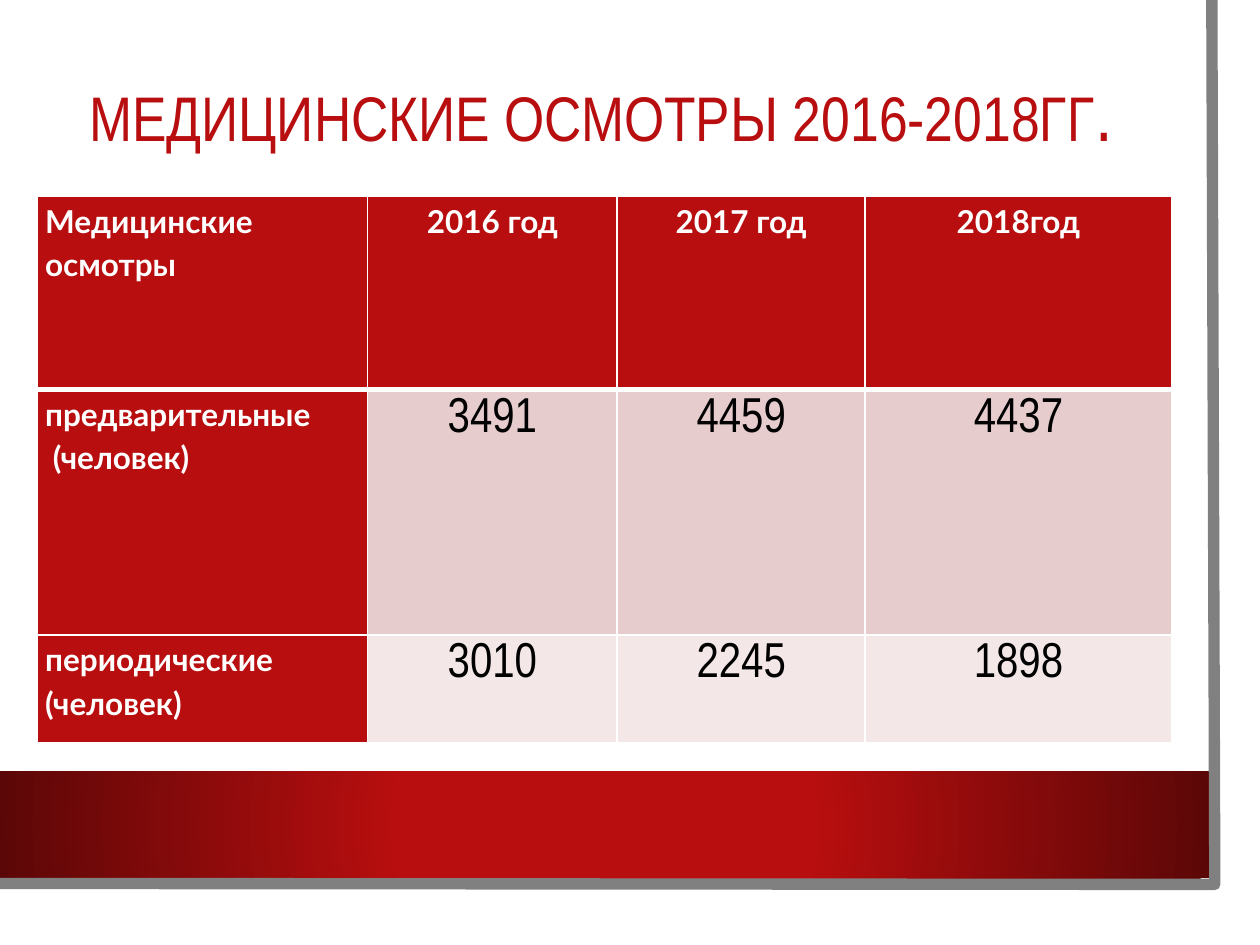
from lxml import etree
from pptx import Presentation
from pptx import util as u
from pptx.dml.color import RGBColor
from pptx.enum import shapes, text
from pptx.oxml import ns

RED, DARK_RED, WHITE, GRAY = "B80E0F", "5C0707", "FFFFFF", "808080"


def rgb(value):
    return RGBColor.from_string(value)


def add(parent, tag, **attributes):
    return etree.SubElement(parent, ns.qn(tag), {k: str(v) for k, v in attributes.items()})


prs = Presentation()
prs.slide_width, prs.slide_height = u.Cm(25.4), u.Cm(19.05)
slide = prs.slides.add_slide(prs.slide_layouts[6])

page = slide.shapes.add_shape(shapes.MSO_SHAPE.RECTANGLE, 0, 0, u.Cm(24.97), u.Cm(18.47))
page.fill.solid()
page.fill.fore_color.rgb = rgb(WHITE)
band = slide.shapes.add_shape(
    shapes.MSO_SHAPE.RECTANGLE, 0, u.Cm(15.55), u.Cm(24.38), u.Cm(2.16))
band.fill.gradient()
gradient = band._element.spPr.find(ns.qn("a:gradFill"))
for child in list(gradient):
    gradient.remove(child)
stops = add(gradient, "a:gsLst")
for position, color in ((34, RED), (100, DARK_RED)):
    add(add(stops, "a:gs", pos=position * 1000), "a:srgbClr", val=color)
center = add(gradient, "a:path", path="circle")
add(center, "a:fillToRect", l=50000, t=50000, r=50000, b=50000)
for backdrop in (page, band):
    backdrop.line.fill.background()
    backdrop.shadow.inherit = False

outline = slide.shapes.build_freeform(u.Cm(24.43), 0)
outline.add_line_segments(
    [(u.Cm(24.49), u.Cm(17.83)), (u.Cm(-0.05), u.Cm(17.81))], close=False)
edge = outline.convert_to_shape()
edge.fill.background()
edge.line.color.rgb = rgb(GRAY)
edge.line.width = u.Pt(6.5)
edge.shadow.inherit = False

heading = slide.shapes.add_textbox(u.Cm(1.55), u.Cm(0.76), u.Cm(21.67), u.Cm(3.2)).text_frame
heading.word_wrap = True
heading.vertical_anchor = text.MSO_ANCHOR.MIDDLE
title = heading.paragraphs[0]
title.line_spacing = 0.9
title.font.name = "Arial Narrow"
title.font.color.rgb = rgb(RED)
for words, size in (("МЕДИЦИНСКИЕ ОСМОТРЫ 2016-2018ГГ", 36), (".", 44)):
    run = title.add_run()
    run.text = words
    run.font.size = u.Pt(size)

exams = [
    ("Медицинские осмотры", "2016 год", "2017 год", "2018год"),
    ("предварительные\n (человек)", "3491", "4459", "4437"),
    ("периодические (человек)", "3010", "2245", "1898"),
]
row_fills = (RED, "E6CCCC", "F3E7E7")
table = slide.shapes.add_table(
    3, 4, u.Cm(0.76), u.Cm(3.96), u.Cm(22.86), u.Cm(11.02)).table
table.horz_banding = False
for column, width in zip(table.columns, (6.65, 5.03, 5, 6.18)):
    column.width = u.Cm(width)
for row, height in zip(table.rows, (3.89, 4.95, 2.18)):
    row.height = u.Cm(height)

for r, values in enumerate(exams):
    for c, value in enumerate(values):
        cell = table.cell(r, c)
        cell.text = value
        cell.margin_left = cell.margin_right = u.Cm(0.15)
        cell.margin_top = cell.margin_bottom = 0
        is_label = r == 0 or c == 0
        properties = cell._tc.get_or_add_tcPr()
        for side in "LRTB":
            thick = (r == 0 and side == "B") or (r == 1 and side == "T")
            border = add(properties, f"a:ln{side}", w=u.Pt(3 if thick else 1))
            add(add(border, "a:solidFill"), "a:srgbClr", val=WHITE)
        cell.fill.solid()
        cell.fill.fore_color.rgb = rgb(RED if is_label else row_fills[r])
        for paragraph in cell.text_frame.paragraphs:
            paragraph.alignment = text.PP_ALIGN.CENTER if c else text.PP_ALIGN.JUSTIFY
            paragraph.line_spacing = 1.15
            paragraph.font.name = "Lato" if is_label else "Arial Narrow"
            paragraph.font.size = u.Pt(18 if is_label else 28)
            paragraph.font.bold = is_label
            paragraph.font.color.rgb = rgb(WHITE if is_label else "000000")

prs.save("out.pptx")
